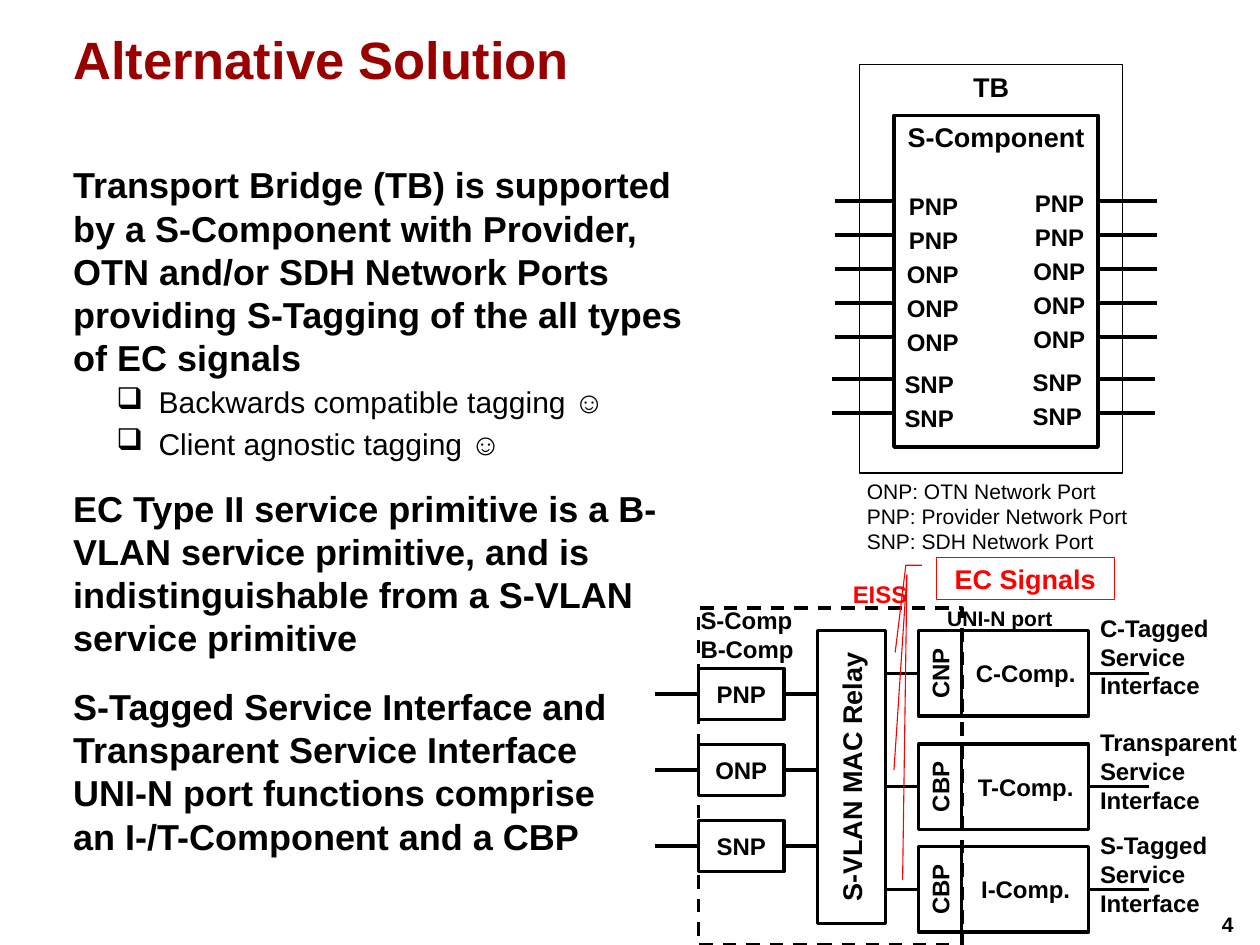
import pptx
import pptx.util
import pptx.dml.color
import pptx.enum.dml
import pptx.enum.shapes
import pptx.enum.text
import pptx.oxml.ns
import lxml.etree

Inches = pptx.util.Inches
Pt = pptx.util.Pt
SHAPES = pptx.enum.shapes.MSO_SHAPE
ALIGN = pptx.enum.text.PP_ALIGN
ANCHOR = pptx.enum.text.MSO_ANCHOR
COLOURS = {"black": "000000", "title": "990000", "signal": "FF0000"}
FONT = "Arial"

TITLE = "Alternative Solution"
PAGE = "4"
POINTS = [
    ("Transport Bridge (TB) is supported by a S-Component with Provider, OTN and/or SDH "
     "Network Ports providing S-Tagging of the all types of EC signals", 0),
    ("Backwards compatible tagging ☺", 1),
    ("Client agnostic tagging ☺", 1),
    ("EC Type II service primitive is a B-VLAN service primitive, and is "
     "indistinguishable from a S-VLAN service primitive", 0),
    ("S-Tagged Service Interface and Transparent Service Interface \v"
     "UNI-N port functions comprise\van I-/T-Component and a CBP", 0),
]
LEGEND = ["ONP: OTN Network Port", "PNP: Provider Network Port", "SNP: SDH Network Port"]

BRIDGE_PORTS = [
    (["PNP", "PNP"], 1.86, 8.32, 9.48, 0.66, 0),
    (["ONP", "ONP", "ONP"], 2.49, 8.3, 9.46, 0.69, 0),
    (["SNP", "SNP"], 3.51, 8.28, 9.46, 0.66, -0.02),
]
PORT_PITCH = 0.315
RELAY_PORTS = ["PNP", "ONP", "SNP"]
INTERFACES = [
    ("CNP", "C-Comp.", "C-Tagged Service Interface", 5.84, 5.63),
    ("CBP", "T-Comp.", "Transparent Service Interface", 6.89, 6.69),
    ("CBP", "I-Comp.", "S-Tagged Service Interface", 7.84, 7.64),
]

deck = pptx.Presentation()
deck.slide_width, deck.slide_height = Inches(11.67), Inches(8.75)
slide = deck.slides.add_slide(deck.slide_layouts[6])


def colour(name):
    return pptx.dml.color.RGBColor.from_string(COLOURS[name])


def write(frame, text, size=16, ink="black", bold=True, align=ALIGN.LEFT,
          anchor=ANCHOR.TOP, wrap=True, upward=False):
    frame.word_wrap = wrap
    frame.vertical_anchor = anchor
    if not wrap:
        frame.auto_size = pptx.enum.text.MSO_AUTO_SIZE.SHAPE_TO_FIT_TEXT
    if upward:
        frame._txBody.bodyPr.set("vert", "vert270")
    lines = [text] if isinstance(text, str) else text
    for index, line in enumerate(lines):
        paragraph = frame.add_paragraph() if index else frame.paragraphs[0]
        paragraph.text = line
        paragraph.alignment = align
        for font in [paragraph.font] + [run.font for run in paragraph.runs]:
            font.name, font.size, font.bold = FONT, Pt(size), bold
            font.color.rgb = colour(ink)


def label(text, left, top, width, height, **style):
    box = slide.shapes.add_textbox(Inches(left), Inches(top), Inches(width), Inches(height))
    write(box.text_frame, text, **style)
    return box


def block(left, top, width, height, text="", weight=2.25, line="black",
          preset=SHAPES.RECTANGLE, anchor=ANCHOR.MIDDLE, **style):
    shape = slide.shapes.add_shape(preset, Inches(left), Inches(top), Inches(width), Inches(height))
    shape.shadow.inherit = False
    shape.fill.background()
    shape.line.color.rgb = colour(line)
    shape.line.width = Pt(weight)
    if text:
        write(shape.text_frame, text, align=ALIGN.CENTER, anchor=anchor, **style)
    return shape


def wire(x1, y1, x2, y2, ink="black", weight=2.25):
    link = slide.shapes.add_connector(pptx.enum.shapes.MSO_CONNECTOR.STRAIGHT,
                                      Inches(x1), Inches(y1), Inches(x2), Inches(y2))
    link.line.color.rgb = colour(ink)
    link.line.width = Pt(weight)
    lxml.etree.SubElement(link._element.spPr, pptx.oxml.ns.qn("a:effectLst"))


def draw_points():
    body = label([text for text, _ in POINTS], 0.58, 1.46, 6.12, 6.2, size=24)
    for index, (paragraph, (_, level)) in enumerate(zip(body.text_frame.paragraphs, POINTS)):
        paragraph.space_before = Pt(7 if level else 16.8 if index else 0)
        if not level:
            continue
        paragraph.line_spacing = 0.85
        for font in [paragraph.font] + [run.font for run in paragraph.runs]:
            font.size, font.bold = Pt(20), False
        properties = paragraph._p.get_or_add_pPr()
        properties.set("marL", str(Inches(0.79)))
        properties.set("indent", str(-Inches(0.39)))
        bullet = lxml.etree.Element(pptx.oxml.ns.qn("a:buChar"), char="❑")
        properties.find(pptx.oxml.ns.qn("a:defRPr")).addprevious(bullet)


def draw_bridge():
    block(8.28, 1.07, 1.89, 3.07, "S-Component", size=18, anchor=ANCHOR.TOP)
    block(7.96, 0.6, 2.44, 3.78, "TB", weight=0.75, size=18, anchor=ANCHOR.TOP)
    for ports, first, left, right, width, shift in BRIDGE_PORTS:
        for row, port in enumerate(ports):
            y = first + row * PORT_PITCH
            label(port, left, y - 0.14, width, 0.37, wrap=False)
            label(port, right, y - 0.16, width, 0.37, wrap=False, align=ALIGN.RIGHT)
            for start in (7.73, 10.17):
                wire(start + shift, y, start + shift + 0.55, y)
    label(LEGEND, 7.93, 4.38, 2.63, 0.81, size=14, bold=False, wrap=False)


def draw_relay():
    block(7.57, 5.84, 0.63, 2.71, "S-VLAN MAC Relay", size=18, upward=True)
    for row, port in enumerate(RELAY_PORTS):
        top = 6.19 + row * 0.705
        block(6.47, top, 0.79, 0.47, port)
        for start, end in ((6.07, 6.47), (7.25, 7.57)):
            wire(start, top + 0.235, end, top + 0.235)
    for port, component, service, top, service_top in INTERFACES:
        block(8.51, top, 1.57, 0.79)
        for start, end in ((8.2, 8.51), (10.09, 10.64)):
            wire(start, top + 0.395, end, top + 0.395)
        block(8.51, top, 0.39, 0.79, port, weight=0.75, upward=True)
        block(8.91, top, 1.18, 0.79, component, weight=0.75)
        label(service, 10.09, service_top, 1.5, 0.91)
    edge = block(6.47, 5.63, 2.44, 3.12)
    edge.line.dash_style = pptx.enum.dml.MSO_LINE.DASH
    label(["S-Comp", "B-Comp"], 6.39, 5.56, 1.07, 0.64, wrap=False)
    label("UNI-N port", 8.67, 5.56, 1.18, 0.34, size=14, wrap=False, align=ALIGN.CENTER)


def draw_signals():
    callout = block(8.67, 5.16, 1.65, 0.39, "EC Signals", weight=0.75, line="signal",
                    preset=SHAPES.LINE_CALLOUT_2, anchor=ANCHOR.TOP, size=18, ink="signal")
    for index, value in enumerate((0.19, -0.08, 0.19, -0.17, 2.26, -0.23)):
        callout.adjustments[index] = value
    for x, y in ((8.28, 7.13), (8.36, 8.15)):
        wire(8.4, 5.32, x, y, ink="signal", weight=0.75)
    label("EISS", 7.8, 5.32, 0.71, 0.37, ink="signal", wrap=False)


label(TITLE, 0.58, 0.2, 10.5, 1.11, size=35, ink="title")
label(PAGE, 11.22, 8.39, 0.44, 0.34, size=14, wrap=False)
draw_points()
draw_bridge()
draw_relay()
draw_signals()
deck.save("out.pptx")
